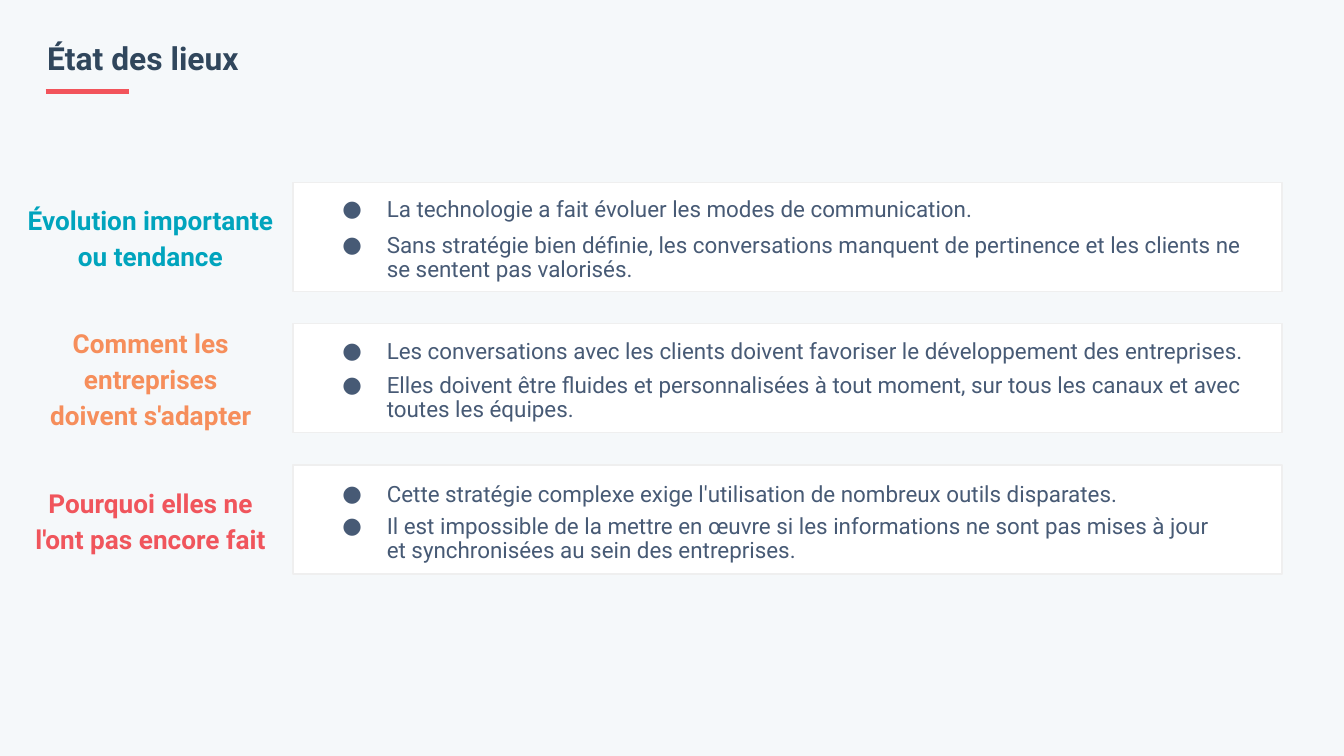
from lxml import etree
from pptx import Presentation
from pptx.dml.color import RGBColor
from pptx.enum.shapes import MSO_CONNECTOR, MSO_SHAPE
from pptx.enum.text import MSO_ANCHOR, MSO_AUTO_SIZE, PP_ALIGN
from pptx.oxml.ns import qn
from pptx.util import Cm, Pt

LEFT, CENTER = PP_ALIGN.LEFT, PP_ALIGN.CENTER
TOP, MIDDLE = MSO_ANCHOR.TOP, MSO_ANCHOR.MIDDLE
NO_AUTOFIT = MSO_AUTO_SIZE.NONE
RECTANGLE = MSO_SHAPE.RECTANGLE
STRAIGHT = MSO_CONNECTOR.STRAIGHT

BACKGROUND = RGBColor(0xF5, 0xF8, 0xFA)
WHITE = RGBColor(0xFF, 0xFF, 0xFF)
BORDER = RGBColor(0xEF, 0xEF, 0xEF)
NAVY = RGBColor(0x30, 0x46, 0x5C)
SLATE = RGBColor(0x47, 0x5A, 0x75)
RED = RGBColor(0xF2, 0x54, 0x5B)
TEAL = RGBColor(0x00, 0xA4, 0xBD)
ORANGE = RGBColor(0xF6, 0x8E, 0x5B)
CORAL = RGBColor(0xF0, 0x55, 0x5C)

FONT = "Roboto"
COMPARISON_LAYOUT = 4
CARD_LEFT, CARD_WIDTH, CARD_HEIGHT = 5.54, 18.69, 2.06
FIRST_CARD_TOP, CARD_PITCH = 3.45, 2.67
LABEL_OFFSET, LABEL_HEIGHT = 0.25, 1.52
LIST_LEFT, LIST_HEIGHT = 5.79, 1.78

ROWS = [
    {
        "label": ["Évolution importante", "ou tendance"],
        "color": TEAL, "label_left": -0.18, "label_width": 6.05,
        "bullets": [
            "La technologie a fait évoluer les modes de communication.",
            "Sans stratégie bien définie, les conversations manquent de pertinence "
            "et les clients ne se sentent pas valorisés.",
        ],
        "list_offset": 0.16, "list_width": 18.39, "gap": 6.3,
    },
    {
        "label": ["Comment les entreprises doivent s'adapter"],
        "color": ORANGE, "label_left": 0.64, "label_width": 4.42,
        "bullets": [
            "Les conversations avec les clients doivent favoriser le développement "
            "des entreprises.",
            "Elles doivent être fluides et personnalisées à tout moment, sur tous "
            "les canaux et avec toutes les équipes.",
        ],
        "list_offset": 0.18, "list_width": 18.39, "gap": 5.2,
    },
    {
        "label": ["Pourquoi elles ne l'ont pas encore fait"],
        "color": CORAL, "label_left": 0.28, "label_width": 5.13,
        "bullets": [
            "Cette stratégie complexe exige l'utilisation de nombreux outils disparates.",
            "Il est impossible de la mettre en œuvre si les informations ne sont pas "
            "mises à jour et synchronisées au sein des entreprises.",
        ],
        "list_offset": 0.21, "list_width": 17.73, "gap": 4.1,
    },
]


def place(shape, left, top, width, height):
    shape.left, shape.top = Cm(left), Cm(top)
    shape.width, shape.height = Cm(width), Cm(height)


def prepare_frame(shape, anchor, vertical_inset=0.25):
    frame = shape.text_frame
    frame.word_wrap = True
    frame.auto_size = NO_AUTOFIT
    frame.vertical_anchor = anchor
    frame.margin_left = frame.margin_right = Cm(0.25)
    frame.margin_top = frame.margin_bottom = Cm(vertical_inset)
    return frame


def format_paragraph(paragraph, size, color, bold, alignment, line_spacing, space_before=0):
    paragraph.alignment = alignment
    paragraph.line_spacing = line_spacing
    paragraph.space_before = Pt(space_before)
    paragraph.space_after = Pt(0)
    for run in paragraph.runs:
        run.font.name = FONT
        run.font.size = Pt(size)
        run.font.bold = bold
        run.font.color.rgb = color


def add_bullet(paragraph):
    properties = paragraph._p.get_or_add_pPr()
    properties.set("marL", str(Cm(1.27)))
    properties.set("indent", str(-Cm(0.84)))
    color = etree.SubElement(properties, qn("a:buClr"))
    etree.SubElement(color, qn("a:srgbClr"), val=str(SLATE))
    etree.SubElement(properties, qn("a:buFont"), typeface=FONT)
    etree.SubElement(properties, qn("a:buChar"), char="●")


def fill_title(slide):
    title = slide.shapes.title
    place(title, 0.64, 0.48, 24.76, 1.19)
    frame = prepare_frame(title, TOP)
    frame.text = "État des lieux"
    format_paragraph(frame.paragraphs[0], 17, NAVY, True, LEFT, 1.0)


def add_underline(slide):
    line = slide.shapes.add_connector(STRAIGHT, Cm(0.86), Cm(1.73), Cm(2.44), Cm(1.73))
    line.line.color.rgb = RED
    line.line.width = Pt(2.25)
    etree.SubElement(line._element.spPr, qn("a:effectLst"))


def add_card(slide, top):
    card = slide.shapes.add_shape(
        RECTANGLE, Cm(CARD_LEFT), Cm(top), Cm(CARD_WIDTH), Cm(CARD_HEIGHT)
    )
    card.shadow.inherit = False
    card.fill.solid()
    card.fill.fore_color.rgb = WHITE
    card.line.color.rgb = BORDER
    card.line.width = Pt(0.75)


def add_label(slide, row, top):
    label = slide.shapes.add_textbox(
        Cm(row["label_left"]), Cm(top), Cm(row["label_width"]), Cm(LABEL_HEIGHT)
    )
    frame = prepare_frame(label, MIDDLE)
    frame.text = "\n".join(row["label"])
    for paragraph in frame.paragraphs:
        format_paragraph(paragraph, 14, row["color"], True, CENTER, 1.15)


def fill_list(slide, placeholder, row, top):
    place(placeholder, LIST_LEFT, top, row["list_width"], LIST_HEIGHT)
    frame = prepare_frame(placeholder, TOP, 0)
    frame.text = "\n".join(row["bullets"])
    spacings = [(1.15, 0), (Pt(13), row["gap"])]
    for paragraph, (line_spacing, gap) in zip(frame.paragraphs, spacings):
        add_bullet(paragraph)
        format_paragraph(paragraph, 12, SLATE, False, LEFT, line_spacing, gap)
    slide.shapes._spTree.append(placeholder._element)


def main():
    presentation = Presentation()
    presentation.slide_width, presentation.slide_height = Cm(25.4), Cm(14.29)
    slide = presentation.slides.add_slide(presentation.slide_layouts[COMPARISON_LAYOUT])
    slide.background.fill.solid()
    slide.background.fill.fore_color.rgb = BACKGROUND
    fill_title(slide)
    add_underline(slide)
    *lists, spare = list(slide.placeholders)[1:]
    spare._element.getparent().remove(spare._element)
    for index, (row, placeholder) in enumerate(zip(ROWS, lists)):
        top = FIRST_CARD_TOP + index * CARD_PITCH
        add_card(slide, top)
        add_label(slide, row, top + LABEL_OFFSET)
        fill_list(slide, placeholder, row, top + row["list_offset"])
    presentation.save("out.pptx")


if __name__ == "__main__":
    main()
